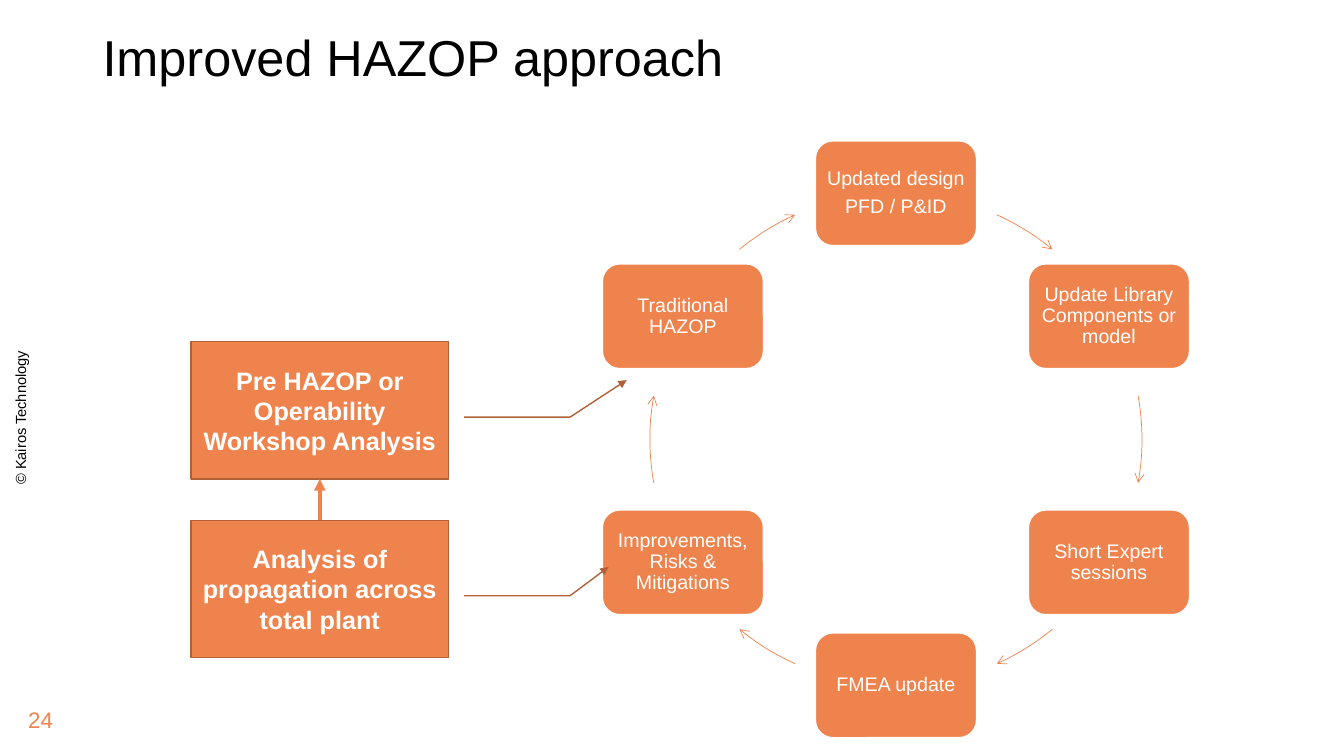
from dataclasses import dataclass
from math import cos, radians, sin
from typing import NamedTuple

from lxml import etree
from pptx import Presentation
from pptx.dml.color import RGBColor
from pptx.enum.shapes import MSO_CONNECTOR, MSO_SHAPE
from pptx.enum.text import MSO_ANCHOR, PP_ALIGN
from pptx.oxml.ns import qn
from pptx.util import Cm, Pt

ROUND, ARC = MSO_SHAPE.ROUNDED_RECTANGLE, MSO_SHAPE.ARC
CALLOUT, STRAIGHT = MSO_SHAPE.LINE_CALLOUT_2, MSO_CONNECTOR.STRAIGHT
LEFT, CENTER, MIDDLE = PP_ALIGN.LEFT, PP_ALIGN.CENTER, MSO_ANCHOR.MIDDLE


@dataclass(frozen=True)
class Theme:
    face: str = "Arial"
    main: RGBColor = RGBColor(0xEF, 0x83, 0x4D)
    edge: RGBColor = RGBColor(0xB1, 0x61, 0x39)
    white: RGBColor = RGBColor(0xFF, 0xFF, 0xFF)
    black: RGBColor = RGBColor(0, 0, 0)
    title: float = 36
    call: float = 18
    page: float = 16
    node: float = 14
    note: float = 10.5


class Box(NamedTuple):
    """Left, top, width and height in centimetres."""
    x: float
    y: float
    w: float
    h: float

    def place(self) -> list[Cm]:
        return [Cm(side) for side in self]


class Callout(NamedTuple):
    text: str
    top: float
    tip_x: float
    tip_y: float


class Label(NamedTuple):
    text: str
    box: Box
    size: float
    color: RGBColor
    turn: float = 0


THEME = Theme()

# Ring of steps, clockwise from the top
MID_X, MID_Y, RADIUS = 22.58, 11.07, 6.2
NODE_W, NODE_H = 4.06, 2.64
STEPS = [
    "Updated design\nPFD / P&ID",
    "Update Library Components or model",
    "Short Expert sessions",
    "FMEA update",
    "Improvements, Risks & Mitigations",
    "Traditional HAZOP",
]
# Start and end of the arrows on one half of the ring, in degrees from the top
SPANS = [(24.2, 39.5), (79.8, 100.2), (140.5, 155.8)]

# Callouts, leader bends as shares of the box
CALL_X, CALL_W, CALL_H = 4.81, 6.5, 3.46
LEAD_Y, LEAD_X, BEND_X = 0.55, 1.06, 1.47
CALLS = [
    Callout("Analysis of propagation across total plant", 13.11, 1.62, 0.34),
    Callout("Pre HAZOP or Operability Workshop Analysis", 8.61, 1.69, 0.28),
]
LABELS = [
    Label("© Kairos Technology", Box(-1.52, 10.08, 4.06, 0.71),
          THEME.note, THEME.black, 270),
    Label("24", Box(0.46, 17.63, 1.3, 1.02), THEME.page, THEME.main),
]


def write(shape, text: str, size: float, color: RGBColor, align=CENTER,
          bold: bool = False, lead: float = 1, after: float = 0) -> None:
    frame = shape.text_frame
    frame.text = text
    frame.word_wrap = True
    frame.vertical_anchor = MIDDLE
    for para in frame.paragraphs:
        para.alignment = align
        para.line_spacing = lead
        para.space_after = Pt(after)
        font = para.font
        font.name, font.size, font.bold = THEME.face, Pt(size), bold
        font.color.rgb = color


def stroke(shape, color: RGBColor, width: float, head: str = "") -> None:
    shape.line.color.rgb = color
    shape.line.width = Pt(width)
    if head:
        line = shape.line._get_or_add_ln()
        etree.SubElement(line, qn("a:tailEnd"), type=head)


def add_form(slide, kind, box: Box):
    shape = slide.shapes.add_shape(kind, *box.place())
    shape.shadow.inherit = False
    shape.fill.solid()
    shape.fill.fore_color.rgb = THEME.main
    return shape


def add_node(slide, text: str, angle: float) -> None:
    x = MID_X + RADIUS * sin(radians(angle)) - NODE_W / 2
    y = MID_Y - RADIUS * cos(radians(angle)) - NODE_H / 2
    node = add_form(slide, ROUND, Box(x, y, NODE_W, NODE_H))
    stroke(node, THEME.white, 1)
    frame = node.text_frame
    frame.margin_left = frame.margin_right = Cm(0.15)
    frame.margin_top = frame.margin_bottom = Cm(0.15)
    write(node, text, THEME.node, THEME.white, lead=0.9, after=4.9)


def add_arc(slide, start: float, end: float) -> None:
    ring = Box(MID_X - RADIUS, MID_Y - RADIUS, 2 * RADIUS, 2 * RADIUS)
    arc = add_form(slide, ARC, ring)
    arc.fill.background()
    for i, angle in enumerate((start, end)):
        arc.adjustments[i] = (angle - 90) % 360 * 0.6
    stroke(arc, THEME.main, 0.5, "arrow")


def add_call(slide, call: Callout) -> None:
    shape = add_form(slide, CALLOUT, Box(CALL_X, call.top, CALL_W, CALL_H))
    bends = (LEAD_Y, LEAD_X, LEAD_Y, BEND_X, call.tip_y, call.tip_x)
    for i, share in enumerate(bends):
        shape.adjustments[i] = share
    stroke(shape, THEME.edge, 1, "triangle")
    write(shape, call.text, THEME.call, THEME.white, bold=True)


def add_label(slide, label: Label) -> None:
    shape = slide.shapes.add_textbox(*label.box.place())
    shape.rotation = label.turn
    write(shape, label.text, label.size, label.color, LEFT)


def main() -> None:
    deck = Presentation()
    deck.slide_width, deck.slide_height = Cm(33.87), Cm(19.05)
    slide = deck.slides.add_slide(deck.slide_layouts[5])

    # Title and margin labels
    title = slide.shapes.title
    title.left, title.top, title.width, title.height = Box(
        2.33, 0.03, 29.21, 2.95).place()
    write(title, "Improved HAZOP approach", THEME.title, THEME.black,
          LEFT, lead=0.9)
    for label in LABELS:
        add_label(slide, label)

    # Cycle
    for i, step in enumerate(STEPS):
        add_node(slide, step, i * 360 / len(STEPS))
    for turn in (0, 180):
        for start, end in SPANS:
            add_arc(slide, start + turn, end + turn)

    # Callouts and the arrow between them
    for call in CALLS:
        add_call(slide, call)
    low, high = CALLS
    mid = Cm(CALL_X + CALL_W / 2)
    link = slide.shapes.add_connector(
        STRAIGHT, mid, Cm(low.top), mid, Cm(high.top + CALL_H))
    stroke(link, THEME.main, 2.75, "triangle")
    etree.SubElement(link._element.spPr, qn("a:effectLst"))

    deck.save("out.pptx")


if __name__ == "__main__":
    main()
